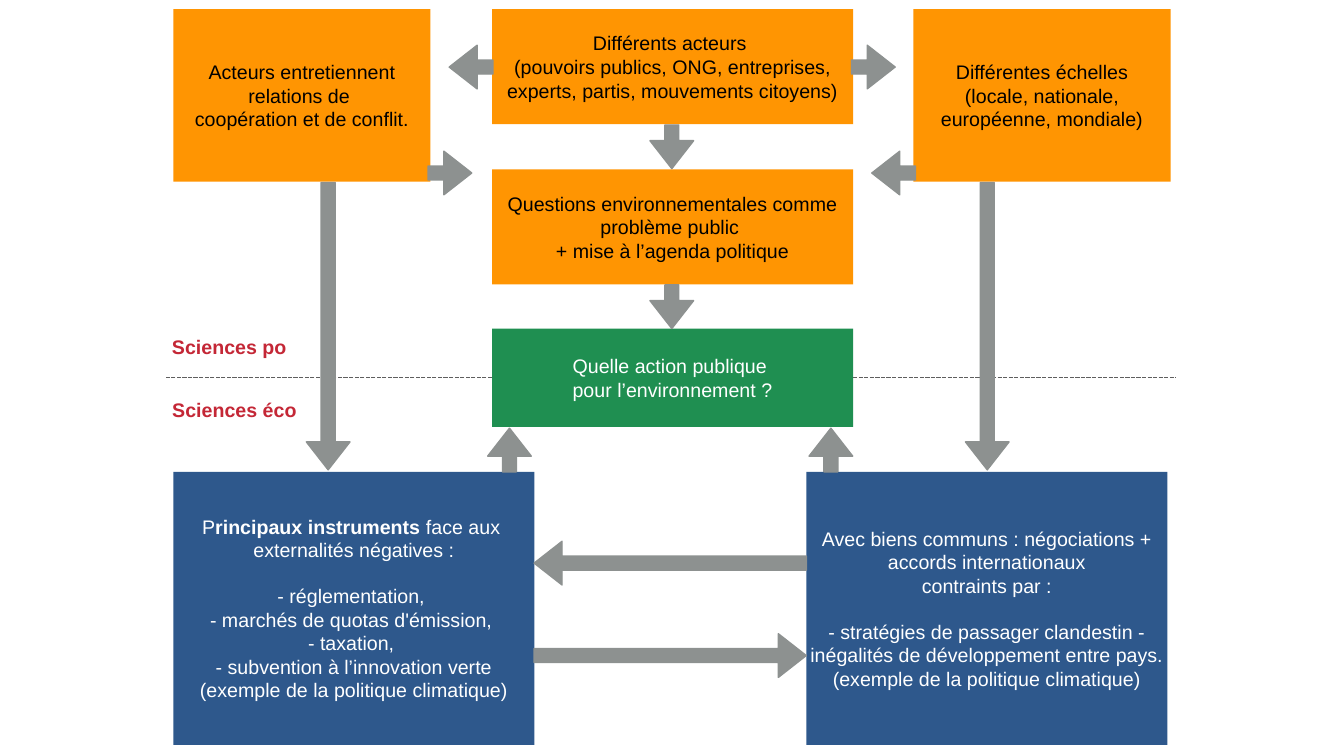
from dataclasses import dataclass

from lxml.etree import SubElement
from pptx import Presentation
from pptx.dml.color import RGBColor
from pptx.enum.dml import MSO_LINE
from pptx.enum.shapes import MSO_CONNECTOR, MSO_SHAPE
from pptx.enum.text import MSO_ANCHOR, MSO_AUTO_SIZE, PP_ALIGN
from pptx.oxml.ns import qn
from pptx.util import Cm, Pt


@dataclass(frozen=True)
class Theme:
    font: str = "Arial"
    size: Pt = Pt(14)
    blank_line: Pt = Pt(16)
    rule: Pt = Pt(1)
    black: RGBColor = RGBColor(0x00, 0x00, 0x00)
    white: RGBColor = RGBColor(0xFF, 0xFF, 0xFF)
    orange: RGBColor = RGBColor(0xFF, 0x95, 0x02)
    green: RGBColor = RGBColor(0x1F, 0x8F, 0x51)
    blue: RGBColor = RGBColor(0x2E, 0x58, 0x8C)
    red: RGBColor = RGBColor(0xC4, 0x27, 0x36)
    arrow: RGBColor = RGBColor(0x8D, 0x91, 0x90)
    divider: RGBColor = RGBColor(0x5E, 0x5E, 0x5E)


theme = Theme()


def write(frame, paragraphs, color, gap_before=None):
    """Fill a frame with lists of (text, bold) runs; gap_before is the paragraph set apart."""
    frame.vertical_anchor = MSO_ANCHOR.MIDDLE
    frame.margin_left = frame.margin_right = Cm(0.1)
    frame.margin_top = frame.margin_bottom = Cm(0.1)
    for index, runs in enumerate(paragraphs):
        paragraph = frame.paragraphs[0] if index == 0 else frame.add_paragraph()
        paragraph.alignment = PP_ALIGN.CENTER
        if index == gap_before:
            paragraph.space_before = theme.blank_line
        for text, bold in runs:
            run = paragraph.add_run()
            run.text = text
            run.font.name = theme.font
            run.font.size = theme.size
            run.font.bold = bold
            run.font.color.rgb = color


presentation = Presentation()
presentation.slide_width, presentation.slide_height = Cm(33.87), Cm(19.05)
slide = presentation.slides.add_slide(presentation.slide_layouts[6])
shapes = slide.shapes

left, middle, top, wide, narrow = 4.37, 12.4, 0.23, 9.1, 6.48
blue_top, blue_height = 11.89, 6.88

# Left, top, width, height, fill, text colour, paragraph set apart, paragraphs
boxes = [
    (middle, 8.28, wide, 2.48, theme.green, theme.white, None, [
        [("Quelle action publique ", False)],
        [("pour l’environnement ?", False)],
    ]),
    (middle, top, wide, 2.9, theme.orange, theme.black, None, [
        [("Différents acteurs ", False)],
        [("(pouvoirs publics, ONG, entreprises, experts, partis, mouvements citoyens)", False)],
    ]),
    (left, top, narrow, 4.35, theme.orange, theme.black, None, [
        [("Acteurs entretiennent relations de ", False)],
        [("coopération et de conflit.", False)],
    ]),
    (23.02, top, narrow, 4.35, theme.orange, theme.black, None, [
        [("Différentes échelles", False)],
        [("(locale, nationale, européenne, mondiale)", False)],
    ]),
    (middle, 4.27, wide, 2.9, theme.orange, theme.black, None, [
        [("Questions environnementales comme problème public ", False)],
        [("+ mise à l’agenda politique", False)],
    ]),
    (20.32, blue_top, wide, blue_height, theme.blue, theme.white, 2, [
        [("Avec biens communs : négociations + accords internationaux", False)],
        [("contraints par :", False)],
        [("- stratégies de passager clandestin - inégalités de développement entre pays.", False)],
        [("(exemple de la politique climatique)", False)],
    ]),
    (left, blue_top, wide, blue_height, theme.blue, theme.white, 2, [
        [("P", False), ("rincipaux instruments", True), (" face aux ", False)],
        [("externalités négatives :", False)],
        [("- réglementation, ", False)],
        [("- marchés de quotas d'émission, ", False)],
        [("- taxation, ", False)],
        [("- subvention à l’innovation verte", False)],
        [("(exemple de la politique climatique)", False)],
    ]),
]
drawn_boxes = []
for x, y, width, height, fill, color, gap_before, paragraphs in boxes:
    box = shapes.add_shape(MSO_SHAPE.RECTANGLE, Cm(x), Cm(y), Cm(width), Cm(height))
    box.shadow.inherit = False
    box.fill.solid()
    box.fill.fore_color.rgb = fill
    box.line.fill.background()
    box.text_frame.word_wrap = True
    write(box.text_frame, paragraphs, color, gap_before)
    drawn_boxes.append(box)
public_action = drawn_boxes[0]

# Divider between the two disciplines, on both sides of the central question
divider_y = Cm(9.52)
for outer_x, side in ((29.64, 3), (4.17, 1)):
    divider = shapes.add_connector(
        MSO_CONNECTOR.STRAIGHT, Cm(middle), divider_y, Cm(outer_x), divider_y)
    divider.begin_connect(public_action, side)
    divider.line.color.rgb = theme.divider
    divider.line.width = theme.rule
    divider.line.dash_style = MSO_LINE.SQUARE_DOT
    SubElement(divider.line._get_or_add_ln().getparent(), qn("a:effectLst"))

for discipline, y, width in (("Sciences po", 8.33, 3.12), ("Sciences éco", 9.93, 3.38)):
    label = shapes.add_textbox(Cm(4.22), Cm(y), Cm(width), Cm(0.79))
    label.text_frame.word_wrap = False
    label.text_frame.auto_size = MSO_AUTO_SIZE.SHAPE_TO_FIT_TEXT
    write(label.text_frame, [[(discipline, True)]], theme.red)

thickness = 1.1
short, tall, across = thickness, 7.24, 6.86
rightward, downward, leftward, upward = 0, 90, 180, 270

# Centre x, centre y, length, direction
arrows = [
    (22.01, 1.69, short, rightward),
    (11.87, 1.69, short, leftward),
    (16.93, 3.7, short, downward),
    (16.93, 7.73, short, downward),
    (11.34, 4.36, short, rightward),
    (22.52, 4.36, short, leftward),
    (8.27, 8.22, tall, downward),
    (24.88, 8.22, tall, downward),
    (16.89, 16.52, across, rightward),
    (16.89, 14.19, across, leftward),
    (12.84, 11.34, short, upward),
    (20.94, 11.34, short, upward),
]
for center_x, center_y, length, direction in arrows:
    arrow = shapes.add_shape(
        MSO_SHAPE.RIGHT_ARROW, Cm(center_x - length / 2), Cm(center_y - thickness / 2),
        Cm(length), Cm(thickness))
    arrow.rotation = direction
    arrow.adjustments[0] = 0.32
    arrow.adjustments[1] = 0.64
    arrow.shadow.inherit = False
    arrow.fill.solid()
    arrow.fill.fore_color.rgb = theme.arrow
    arrow.line.color.rgb = theme.arrow
    arrow.line.width = theme.rule

presentation.save("out.pptx")
